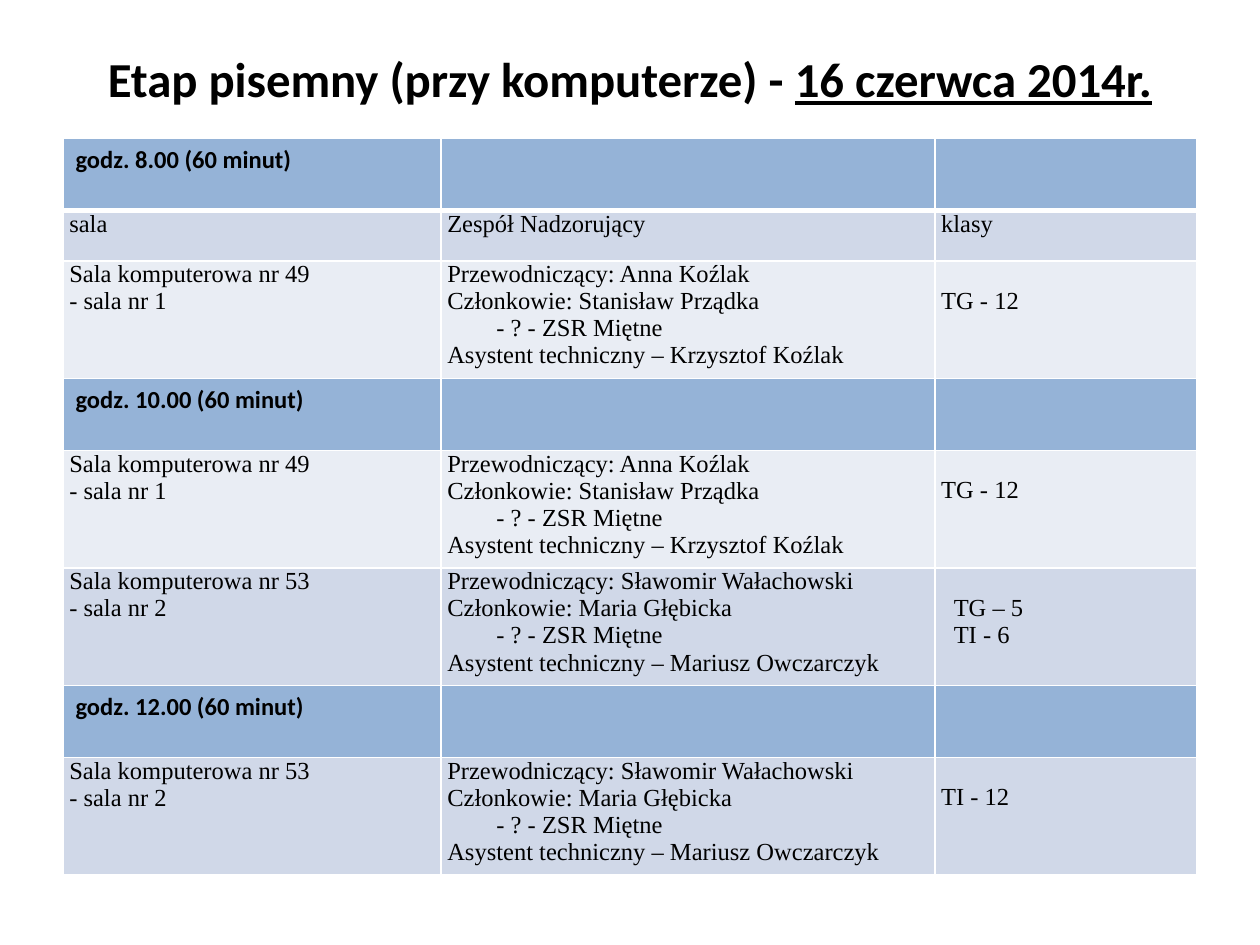
import dataclasses

import pptx
import pptx.dml.color
import pptx.enum.text
import pptx.oxml
import pptx.oxml.ns
import pptx.util


@dataclasses.dataclass(frozen=True)
class Theme:
    ink: str = "000000"
    line: str = "FFFFFF"
    band: str = "95B3D7"
    dark_row: str = "D0D8E8"
    light_row: str = "E9EDF4"
    heading_font: str = "Calibri"
    body_font: str = "Times New Roman"
    title_size: float = 27.9
    table_size: float = 14


@dataclasses.dataclass
class Row:
    cells: list
    fill: str
    height: float
    is_band: bool = False


THEME = Theme()
COLUMNS, ROWS = 100, 75
INDENT = 0.39
CLASS_INDENT = 0.1
LINE_HEIGHT = 0.21


def write(para, text, font=THEME.body_font, size=THEME.table_size, bold=False,
          underline=False, indent=0):
    span = para.add_run()
    span.text = text
    span.font.name = font
    span.font.size = pptx.util.Pt(size)
    span.font.bold = bold
    span.font.underline = underline
    span.font.color.rgb = pptx.dml.color.RGBColor.from_string(THEME.ink)
    if indent:
        properties = para._p.get_or_add_pPr()
        properties.set("marL", str(pptx.util.Inches(indent)))
        properties.set("indent", "0")


class SlideBuilder:
    def __init__(self, deck, theme):
        self.deck = deck
        self.theme = theme
        self.slide = deck.slides.add_slide(deck.slide_layouts[6])

    def place(self, left, top, width, height):
        """Turn grid columns and rows into slide lengths."""
        across = self.deck.slide_width / COLUMNS
        down = self.deck.slide_height / ROWS
        return [round(value) for value in
                (left * across, top * down, width * across, height * down)]

    def title(self, place, plain, underlined):
        box = self.slide.shapes.add_textbox(*self.place(*place))
        frame = box.text_frame
        frame.word_wrap = True
        frame.margin_top = pptx.util.Inches(0.09)
        para = frame.paragraphs[0]
        para.alignment = pptx.enum.text.PP_ALIGN.CENTER
        style = dict(font=self.theme.heading_font, size=self.theme.title_size, bold=True)
        write(para, plain, **style)
        write(para, underlined, underline=True, **style)

    def table(self, left, top, widths, rows):
        place = self.place(left, top, sum(widths), sum(row.height for row in rows))
        frame = self.slide.shapes.add_table(len(rows), len(widths), *place)
        table = frame.table
        for column, width in zip(table.columns, widths):
            column.width = self.place(0, 0, width, 0)[2]
        for index, row in enumerate(rows):
            table.rows[index].height = self.place(0, 0, 0, row.height)[3]
            for cell, lines in zip(table.rows[index].cells, row.cells):
                self.borders(cell, top=3 if index == 1 else 1,
                             bottom=3 if index == 0 else 1)
                cell.fill.solid()
                cell.fill.fore_color.rgb = pptx.dml.color.RGBColor.from_string(row.fill)
                self.fill_cell(cell, lines, row.is_band)

    def fill_cell(self, cell, lines, is_band):
        if not is_band:
            cell.margin_left = cell.margin_right = pptx.util.Inches(0.05)
            cell.margin_top = cell.margin_bottom = 0
        font = self.theme.heading_font if is_band else self.theme.body_font
        frame = cell.text_frame
        for index, (text, indent) in enumerate(lines):
            para = frame.add_paragraph() if index else frame.paragraphs[0]
            write(para, text, font=font, bold=is_band, indent=indent)

    def borders(self, cell, top, bottom):
        properties = cell._tc.get_or_add_tcPr()
        for side, points in (("L", 1), ("R", 1), ("T", top), ("B", bottom)):
            properties.append(pptx.oxml.parse_xml(
                f'<a:ln{side} {pptx.oxml.ns.nsdecls("a")} w="{pptx.util.Pt(points)}">'
                f'<a:solidFill><a:srgbClr val="{self.theme.line}"/></a:solidFill>'
                f'</a:ln{side}>'))

    def lower_text(self, row_numbers, column):
        """Start the text of some cells one line below the cell's top."""
        table = self.slide.shapes[-1].table
        for number in row_numbers:
            table.cell(number, column).margin_top = pptx.util.Inches(LINE_HEIGHT)


def lines(*texts, indent=0):
    return [(text, indent) for text in texts]


def band(hour):
    return Row([lines(f"godz. {hour} (60 minut)"), [], []], THEME.band, 5.7, is_band=True)


def session(room, number, team, classes, fill, indent=0):
    chair, member, assistant = team
    supervisors = (lines(f"Przewodniczący: {chair}", f"Członkowie: {member}")
                   + lines("- ? - ZSR Miętne", indent=INDENT)
                   + lines(f"Asystent techniczny – {assistant}"))
    place = lines(f"Sala komputerowa nr {room}", f"- sala nr {number}")
    return Row([place, supervisors, lines(*classes, indent=indent)], fill, 8.6)


def main():
    deck = pptx.Presentation()
    deck.slide_width = pptx.util.Inches(10)
    deck.slide_height = pptx.util.Inches(7.5)
    page = SlideBuilder(deck, THEME)
    page.title((5, 3, 90, 12.5), "Etap pisemny (przy komputerze) - ", "16 czerwca 2014r.")

    first_team = ("Anna Koźlak", "Stanisław Prządka", "Krzysztof Koźlak")
    second_team = ("Sławomir Wałachowski", "Maria Głębicka", "Mariusz Owczarczyk")
    first_room = session(49, 1, first_team, ["TG - 12"], THEME.light_row)
    headings = [lines(text) for text in ("sala", "Zespół Nadzorujący", "klasy")]
    rows = [
        band("8.00"),
        Row(headings, THEME.dark_row, 4),
        first_room,
        band("10.00"),
        first_room,
        session(53, 2, second_team, ["TG – 5", "TI - 6"], THEME.dark_row, CLASS_INDENT),
        band("12.00"),
        session(53, 2, second_team, ["TI - 12"], THEME.dark_row),
    ]
    page.table(5, 11, (30, 39.2, 20.8), rows)
    page.lower_text((2, 4, 5, 7), column=2)
    deck.save("out.pptx")


if __name__ == "__main__":
    main()
